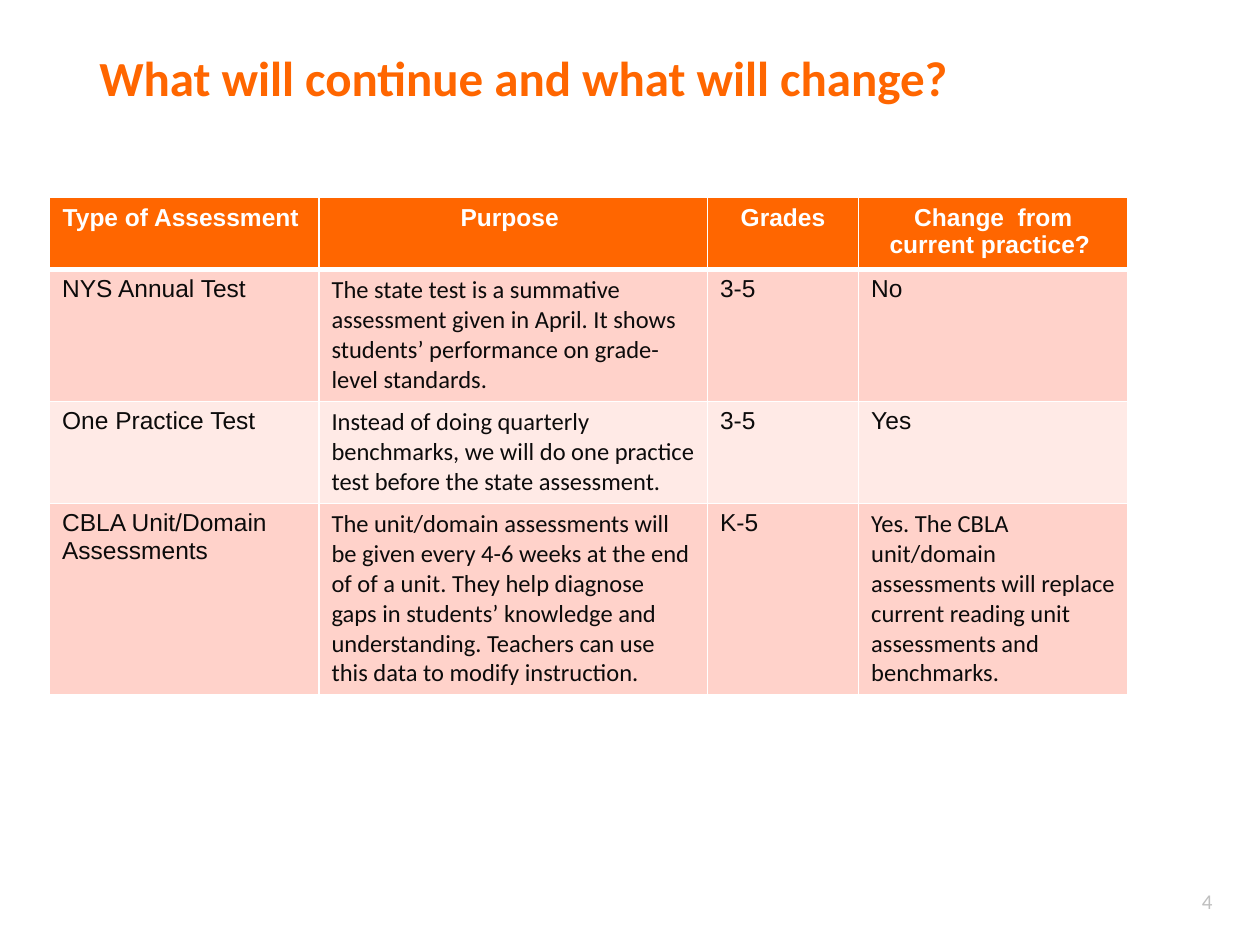
import pptx
import pptx.util
import pptx.dml.color
import pptx.enum.text
import pptx.oxml
import pptx.oxml.ns

Pt = pptx.util.Pt
RGBColor = pptx.dml.color.RGBColor
PP_ALIGN = pptx.enum.text.PP_ALIGN
MSO_ANCHOR = pptx.enum.text.MSO_ANCHOR

ORANGE = RGBColor(0xFF, 0x66, 0x00)
WHITE = RGBColor(0xFF, 0xFF, 0xFF)
INK = RGBColor(0x0C, 0x0B, 0x0B)
PALE_GREY = RGBColor(0xBF, 0xBF, 0xBF)
ROSE = RGBColor(0xFF, 0xD2, 0xCA)
BLUSH = RGBColor(0xFF, 0xEA, 0xE6)

COLUMN_WIDTHS = [154, 222, 86.4, 154]
ROW_HEIGHTS = [38.5, 75.5, 58.3, 109.2]
HEADINGS = ["Type of Assessment ", "Purpose ", "Grades", "Change  from current practice? "]
ASSESSMENTS = [
    ["NYS Annual Test",
     "The state test is a summative assessment given in April. It shows students’ "
     "performance on grade-level standards.",
     "3-5", "No"],
    ["One Practice Test",
     "Instead of doing quarterly benchmarks, we will do one practice test before the "
     "state assessment.",
     "3-5", "Yes"],
    ["CBLA Unit/Domain Assessments",
     "The unit/domain assessments will be given every 4-6 weeks at the end of of a unit. "
     "They help diagnose gaps in students’ knowledge and understanding. Teachers can use "
     "this data to modify instruction.",
     "K-5",
     "Yes. The CBLA unit/domain assessments will replace current reading unit assessments "
     "and benchmarks."],
]
CALIBRI_CELLS = {(1, 1), (2, 1), (3, 1), (3, 3)}


def write_text(frame, text, *, font="Calibri", size=14, color=INK, bold=False,
               align=PP_ALIGN.LEFT):
    paragraph = frame.paragraphs[0]
    paragraph.alignment = align
    run = paragraph.add_run()
    run.text = text
    run.font.name = font
    run.font.size = Pt(size)
    run.font.bold = bold
    run.font.color.rgb = color


def add_label(slide, text, left, top, width, height, inset=(0, 0), **text_format):
    label = slide.shapes.add_textbox(Pt(left), Pt(top), Pt(width), Pt(height))
    frame = label.text_frame
    frame.word_wrap = True
    frame.vertical_anchor = MSO_ANCHOR.MIDDLE
    frame.margin_left = frame.margin_right = Pt(inset[0])
    frame.margin_top = frame.margin_bottom = Pt(inset[1])
    write_text(frame, text, **text_format)


def set_borders(cell, **widths):
    properties = cell._tc.get_or_add_tcPr()
    for side in "LRTB":
        properties.append(pptx.oxml.parse_xml(
            f'<a:ln{side} {pptx.oxml.ns.nsdecls("a")} w="{Pt(widths.get(side, 1))}">'
            f'<a:solidFill><a:srgbClr val="{WHITE}"/></a:solidFill></a:ln{side}>'))


def fill_cell(cell, text, background, borders, **text_format):
    set_borders(cell, **borders)
    cell.fill.solid()
    cell.fill.fore_color.rgb = background
    write_text(cell.text_frame, text, **text_format)


def add_assessment_table(slide, left, top):
    table = slide.shapes.add_table(
        len(ROW_HEIGHTS), len(COLUMN_WIDTHS), Pt(left), Pt(top),
        Pt(sum(COLUMN_WIDTHS)), Pt(sum(ROW_HEIGHTS))).table
    for column, width in zip(table.columns, COLUMN_WIDTHS):
        column.width = Pt(width)
    for row, height in zip(table.rows, ROW_HEIGHTS):
        row.height = Pt(height)

    for column, heading in enumerate(HEADINGS):
        fill_cell(table.cell(0, column), heading, ORANGE, {"B": 3}, font="Arial",
                  color=WHITE, bold=True, align=PP_ALIGN.CENTER)
    for row, assessment in enumerate(ASSESSMENTS, start=1):
        background = ROSE if row % 2 else BLUSH
        borders = {"T": 3} if row == 1 else {}
        for column, text in enumerate(assessment):
            font = "Calibri" if (row, column) in CALIBRI_CELLS else "Arial"
            fill_cell(table.cell(row, column), text, background, borders, font=font)


def main():
    deck = pptx.Presentation()
    deck.slide_width, deck.slide_height = Pt(720), Pt(540)
    slide = deck.slides.add_slide(deck.slide_layouts[6])
    add_label(slide, "4", 525, 500.4, 167.8, 28.8, size=12, color=PALE_GREY,
              align=PP_ALIGN.RIGHT)
    add_label(slide, "What will continue and what will change?", 49.7, 23, 594.7, 41.8,
              inset=(7.2, 3.6), size=28, color=ORANGE, bold=True)
    add_assessment_table(slide, 28.3, 113)
    deck.save("out.pptx")


if __name__ == "__main__":
    main()
